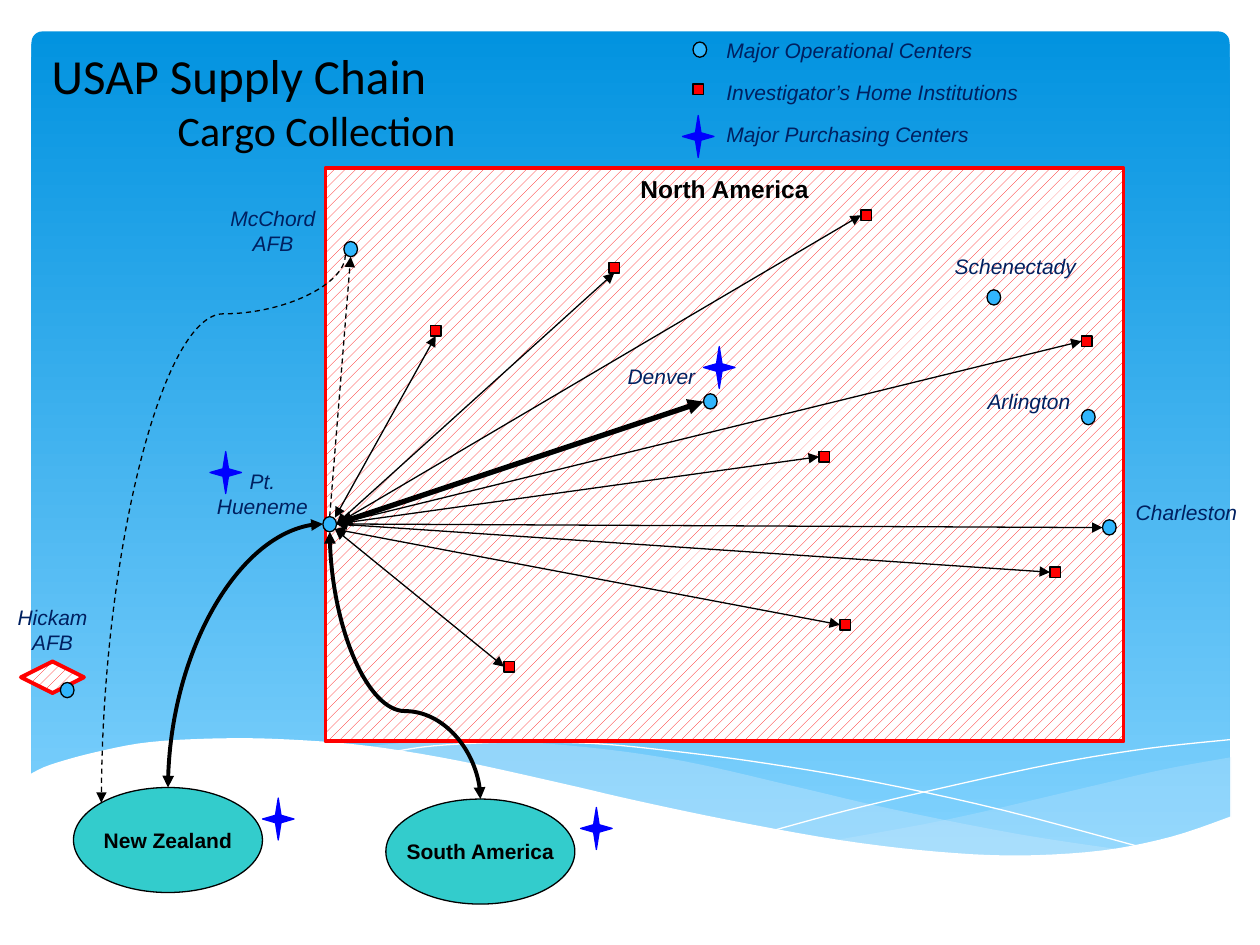
from lxml import etree
from pptx import Presentation
from pptx.dml.color import RGBColor
from pptx.enum.dml import MSO_LINE, MSO_PATTERN
from pptx.enum.shapes import MSO_CONNECTOR, MSO_SHAPE
from pptx.enum.text import MSO_ANCHOR, PP_ALIGN
from pptx.oxml.ns import qn
from pptx.util import Inches, Pt

RECT, ROUND, OVAL = MSO_SHAPE.RECTANGLE, MSO_SHAPE.ROUNDED_RECTANGLE, MSO_SHAPE.OVAL
STAR, DIAMOND = MSO_SHAPE.STAR_4_POINT, MSO_SHAPE.DIAMOND
STRAIGHT, CURVE = MSO_CONNECTOR.STRAIGHT, MSO_CONNECTOR.CURVE
LEFT, CENTER = PP_ALIGN.LEFT, PP_ALIGN.CENTER
DASH, DOTS = MSO_LINE.DASH, MSO_PATTERN.PERCENT_20
TOP, MIDDLE = MSO_ANCHOR.TOP, MSO_ANCHOR.MIDDLE

COLORS = {"sky": "0293E0", "pale": "83D3FE", "mist": "C6E7FC", "white": "FFFFFF",
          "black": "000000", "navy": "002060", "red": "FF0000", "blue": "0000FF",
          "dot": "31B6FD", "teal": "33CCCC"}
LABEL = {"name": "Arial", "size": Pt(12), "italic": True}
BOLD = {"name": "Arial", "size": Pt(12), "bold": True}
HEAD = {"name": "Calibri", "size": Pt(28)}

# The grid has 120 columns and 90 rows, all of one twelfth of an inch.
UNIT = Inches(1) / 12
HUB = (31.4, 49.9)
# Sides of the hub where routes end
UPPER, RIGHT, LOWER = (31.9, 49.3), (32.05, 49.9), (31.9, 50.4)

# Column, row, joined side (1 left, 2 bottom), end at the hub
SITES = [(41, 31, 2, UPPER), (58, 25, 2, RIGHT), (48, 63, 1, LOWER),
         (78, 43, 1, RIGHT), (80, 59, 1, LOWER), (82, 20, 1, RIGHT),
         (100, 54, 1, RIGHT), (103, 32, 1, RIGHT)]
CENTERS = [(30.75, 49.2), (67, 37.5), (103, 39), (5.75, 65), (32.75, 23),
           (94, 27.6), (105, 49.5), (66, 4)]
STARS = [(65, 11), (20, 43), (67, 33), (25, 76), (55.3, 76.9)]
NAMES = [("Pt.\nHueneme", 19, 44, 12), ("Denver", 57, 34, 12),
         ("Arlington", 92, 36.4, 12), ("Hickam\nAFB", 0, 57, 10),
         ("McChord\nAFB", 20, 19, 12), ("Charleston", 106, 47, 14),
         ("Schenectady", 88.7, 23.6, 16)]
LEGEND = ["Major Operational Centers", "Investigator’s Home Institutions",
          "Major Purchasing Centers"]

# Waves: knots in inches, one list for each smooth edge
BACK = [[(9.77, 6.01), (9.22, 6.11), (8.62, 6.25), (7.54, 6.5), (6.62, 6.67)],
        [(6.62, 6.67), (7.33, 6.76), (8.04, 6.8), (8.64, 6.77), (9.22, 6.67), (9.77, 6.49)]]
MID = [[(8.94, 6.75), (8.08, 6.62), (7.07, 6.42), (6.3, 6.24), (5.42, 6.04),
        (4.65, 5.93), (3.8, 5.87), (3.28, 5.89), (2.87, 5.93)],
       [(2.87, 5.93), (3.63, 6.04), (4.5, 6.24), (5.3, 6.42), (6.19, 6.6),
        (6.96, 6.72), (7.62, 6.79), (8.29, 6.8), (8.94, 6.75)]]
FALL = [[(3.1, 5.97), (3.44, 5.92), (4.02, 5.89), (4.69, 5.9), (5.33, 5.96),
         (6.09, 6.06), (6.96, 6.21), (7.96, 6.43), (9.08, 6.73)]]
RISE = [[(6.14, 6.59), (6.73, 6.43), (7.49, 6.25), (8.37, 6.06), (9.11, 5.94), (9.76, 5.87)]]
FRONT = [[(9.77, 6.48), (9.3, 6.64), (8.75, 6.75), (8.09, 6.79), (7.44, 6.76),
          (6.68, 6.67), (5.79, 6.51), (5.03, 6.35), (4.47, 6.22), (3.65, 6.04),
          (2.92, 5.92), (2.3, 5.87), (1.77, 5.86), (1.19, 5.89), (0.76, 5.97),
          (0.4, 6.07), (0.23, 6.15)], [(0.23, 7.31), (9.77, 7.31)]]


def rgb(name):
    return RGBColor.from_string(COLORS[name])


def grid(*cells):
    return [round(cell * UNIT) for cell in cells]


def ink(line, color, width):
    line.color.rgb = rgb(color)
    line.width = Pt(width)


def paint(item, fill=None, color=None, width=0.75):
    item.shadow.inherit = False
    if fill:
        item.fill.solid()
        item.fill.fore_color.rgb = rgb(fill)
    else:
        item.fill.background()
    if color:
        ink(item.line, color, width)
    else:
        item.line.fill.background()


def shape(slide, kind, box, fill=None, color="black", width=0.75):
    item = slide.shapes.add_shape(kind, *grid(*box))
    paint(item, fill, color, width)
    return item


def hatch(item):
    item.fill.patterned()
    item.fill.pattern = DOTS
    item.fill.fore_color.rgb = rgb("red")
    item.fill.back_color.rgb = rgb("white")


def write(item, text, style, color="navy", align=CENTER, anchor=TOP, wrap=True):
    frame = item.text_frame
    frame.word_wrap, frame.vertical_anchor = wrap, anchor
    for i, words in enumerate(text.split("\n")):
        para = frame.add_paragraph() if i else frame.paragraphs[0]
        para.text, para.alignment = words, align
        for key, value in style.items():
            setattr(para.font, key, value)
        para.font.color.rgb = rgb(color)
    return frame


def label(slide, text, box, **look):
    return write(slide.shapes.add_textbox(*grid(*box)), text, **look)


def smooth(knots, steps=5):
    """Points of a Catmull-Rom curve through the knots."""
    ends = [knots[0], *knots, knots[-1]]
    points = [knots[0]]
    for a, b, c, d in zip(ends, ends[1:], ends[2:], ends[3:]):
        for t in (n / steps for n in range(1, steps + 1)):
            points.append(tuple(
                (2 * q + (r - p) * t + (2 * p - 5 * q + 4 * r - s) * t ** 2
                 + (3 * q - p - 3 * r + s) * t ** 3) / 2
                for p, q, r, s in zip(a, b, c, d)))
    return points


def wave(slide, edges, fill=None, alpha=100, color=None):
    points = [(Inches(x), Inches(y)) for edge in edges for x, y in smooth(edge)]
    path = slide.shapes.build_freeform(*points[0], scale=1.0)
    path.add_line_segments(points[1:], close=fill is not None)
    item = path.convert_to_shape()
    paint(item, fill, color, 0)
    if alpha < 100:
        tone = item.element.spPr.find(".//" + qn("a:srgbClr"))
        etree.SubElement(tone, qn("a:alpha"), val=str(alpha * 1000))


def route(slide, start, end, width=0.75, heads=("head", "tail"), dash=None, kind=STRAIGHT):
    item = slide.shapes.add_connector(kind, *grid(*start, *end))
    ink(item.line, "black", width)
    if dash:
        item.line.dash_style = dash
    line = item.line._get_or_add_ln()
    for head in heads:
        etree.SubElement(line, qn(f"a:{head}End"), type="triangle")
    etree.SubElement(item.element.spPr, qn("a:effectLst"))
    return item


def bend(slide, start, end, turn, flip=None, form="curvedConnector3", adj=None, **look):
    """Curved route, set in its box before the turn in degrees."""
    (x, y), (u, v) = start, end
    w, h = abs(u - x), abs(v - y)
    if turn % 180:
        w, h = h, w
    left, top = (x + u - w) / 2, (y + v - h) / 2
    item = route(slide, (left, top), (left + w, top + h), kind=CURVE, **look)
    props = item.element.spPr
    frame = props.find(qn("a:xfrm"))
    frame.set("rot", str(turn * 60000))
    if flip:
        frame.set(flip, "1")
    geom = props.find(qn("a:prstGeom"))
    geom.set("prst", form)
    if adj:
        etree.SubElement(geom.find(qn("a:avLst")), qn("a:gd"),
                         name="adj1", fmla=f"val {round(adj * 100000)}")


def scene(slide):
    sky = shape(slide, ROUND, (3, 3, 114.1, 79.2), "sky", None)
    sky.adjustments[0] = 0.013
    sky.fill.gradient()
    sky.fill.gradient_angle = 270
    for stop, name in zip(sky.fill.gradient_stops, ("sky", "pale")):
        stop.color.rgb = rgb(name)
    wave(slide, BACK, "mist", 29)
    wave(slide, MID, "mist", 40)
    for edges in (FALL, RISE):
        wave(slide, edges, color="white")
    wave(slide, FRONT, "white")


def places(slide):
    area = shape(slide, RECT, (31, 16, 76, 54.6), "white", "red", 2.25)
    hatch(area)
    write(area, "North America", {**BOLD, "size": Pt(14)}, "black")
    hatch(shape(slide, DIAMOND, (2, 63, 6, 3), "white", "red", 2.25))
    for x, y in CENTERS:
        shape(slide, OVAL, (x, y, 1.3, 1.45), "dot")
    for x, y in STARS:
        shape(slide, STAR, (x, y, 3, 4), "blue", "blue").adjustments[0] = 0.125
    for text, x, y, w in NAMES:
        label(slide, text, (x, y, w, 3.6 if "\n" not in text else 6), style=LABEL)
    for text, x, y in (("New Zealand", 7, 75), ("South America", 36.75, 76.1)):
        land = shape(slide, OVAL, (x, y, 18, 10), "teal")
        write(land, text, BOLD, "black", anchor=MIDDLE, wrap=False)


def routes(slide):
    for x, y, side, end in SITES:
        site = shape(slide, RECT, (x, y, 1, 1), "red")
        route(slide, (x, y), end).begin_connect(site, side)
    route(slide, (67, 38.25), RIGHT, 3)
    route(slide, (105, 50.25), RIGHT)
    route(slide, (HUB[0], 49.2), (33.4, 24.45), heads=["tail"], dash=DASH)
    bend(slide, (30.75, HUB[1]), (16, 75), 180, "flipV", "curvedConnector2", width=2.25)
    bend(slide, (32.9, 24.25), (9.65, 76.45), 90, adj=0.108, heads=["tail"], dash=DASH)
    bend(slide, (HUB[0], 50.65), (45.75, 76.1), 270, "flipH", adj=0.671, width=2.25)


def main():
    deck = Presentation()
    deck.slide_width, deck.slide_height = grid(120, 90)
    slide = deck.slides.add_slide(deck.slide_layouts[6])
    scene(slide)
    title = label(slide, "USAP Supply Chain\nCargo Collection", (3.75, 3.75, 55, 11.75),
                  style=HEAD, color="black", align=LEFT)
    second = title.paragraphs[1]
    second.font.size = Pt(24)
    second._p.get_or_add_pPr().set("marL", str(Inches(1)))
    places(slide)
    routes(slide)
    shape(slide, RECT, (66, 8, 1, 1), "red")
    for i, text in enumerate(LEGEND):
        label(slide, text, (68, 3 + 4 * i, 32, 3.6), style=LABEL, align=LEFT)
    deck.save("out.pptx")


if __name__ == "__main__":
    main()
